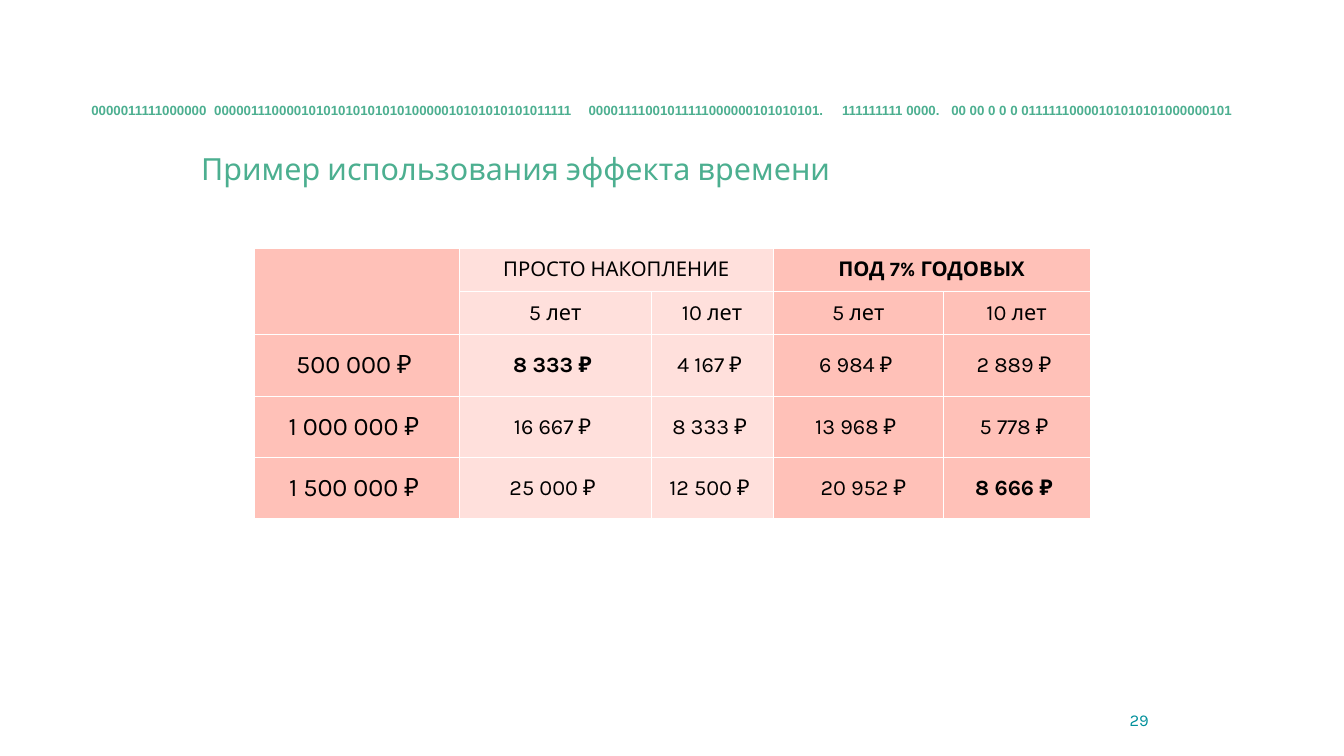
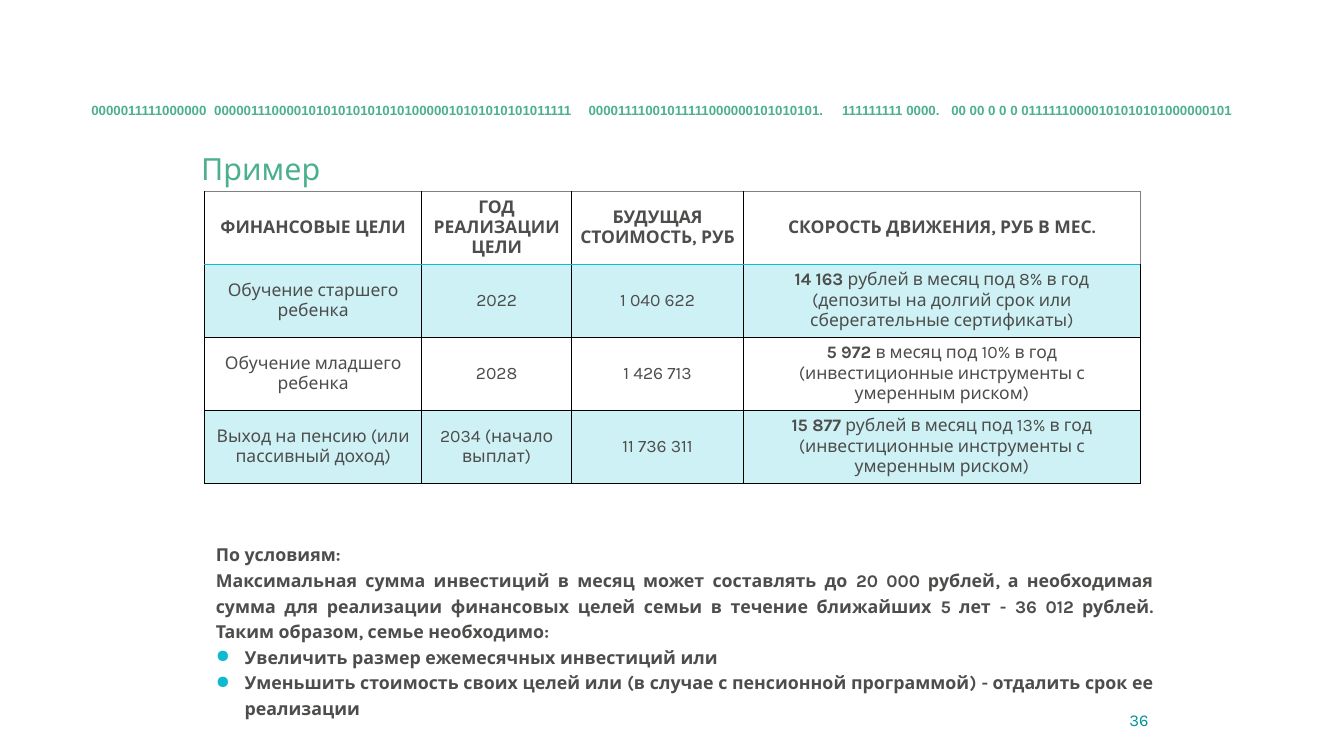
from itertools import product

from lxml.etree import SubElement
from pptx import Presentation
from pptx.dml.color import RGBColor
from pptx.enum.text import MSO_ANCHOR as Anchor, PP_ALIGN as Align
from pptx.oxml.ns import qn
from pptx.util import Pt

PX = 9525
GREEN, TEAL, CYAN = "4CAF90", "00909B", "0EBACE"
BLACK, GRAPHITE, GREY, WHITE = "000000", "4D4D4C", "808080", "FFFFFF"
ROSE, PALE_ROSE = "FFC1B8", "FFE0DC"
BINARY_PARTS = [
    "0000011111000000",
    "0000011100001010101010101010000010101010101011111",
    "00001111001011111000000101010101.",
    "111111111 0000.",
    "00 00 0 0 0 01111110000101010101000000101",
]
BINARY_STOPS = [234, 947, 1430, 1638]


def px(length):
    return length * PX


def rgb(color):
    return RGBColor.from_string(color)


def style(paragraph, size, color, bold=None, align=None, font="Karla"):
    if align is not None:
        paragraph.alignment = align
    paragraph.font.name = font
    paragraph.font.size = Pt(size)
    paragraph.font.color.rgb = rgb(color)
    if bold is not None:
        paragraph.font.bold = bold


def set_margins(holder, left, top, right, bottom):
    holder.margin_left, holder.margin_top = px(left), px(top)
    holder.margin_right, holder.margin_bottom = px(right), px(bottom)


def add_frame(slide, box, margins, anchor=Anchor.TOP):
    frame = slide.shapes.add_textbox(*map(px, box)).text_frame
    frame.word_wrap = True
    frame.vertical_anchor = anchor
    set_margins(frame, *margins)
    return frame


def add_binary_line(slide, box):
    line = add_frame(slide, box, (10, 5, 10, 5)).paragraphs[0]
    line.text = "\t".join(BINARY_PARTS)
    stops = SubElement(line._p.get_or_add_pPr(), qn("a:tabLst"))
    for stop in BINARY_STOPS:
        SubElement(stops, qn("a:tab"), pos=str(px(stop)), algn="l")
    style(line, 19, GREEN, True, font="Arial")


def add_base(deck, title, number):
    slide = deck.slides.add_slide(deck.slide_layouts[6])
    page = add_frame(slide, (2055, 1333, 152, 77), (19, 10, 19, 10), Anchor.MIDDLE).paragraphs[0]
    page.text = number
    style(page, 23.6, TEAL, align=Align.RIGHT)
    heading = add_frame(slide, (364, 275, 1832, 102), (19, 10, 19, 10)).paragraphs[0]
    heading.text = title
    style(heading, 43.5, GREEN)
    add_binary_line(slide, (164, 190, 2264, 40))
    return slide


def add_grid(slide, left, top, widths, heights):
    box = left, top, sum(widths), sum(heights)
    table = slide.shapes.add_table(len(heights), len(widths), *map(px, box)).table
    table.first_row = table.horz_banding = False
    for column, width in zip(table.columns, widths):
        column.width = px(width)
    for row, height in zip(table.rows, heights):
        row.height = px(height)
    return table


def set_borders(cell, left, right, top, bottom):
    for side, color in zip("LRTB", (left, right, top, bottom)):
        line = SubElement(cell._tc.get_or_add_tcPr(), qn(f"a:ln{side}"), w=str(Pt(1)))
        SubElement(SubElement(line, qn("a:solidFill")), qn("a:srgbClr"), val=color)


def fill_cell(cell, color, opacity=100):
    cell.fill.solid()
    cell.fill.fore_color.rgb = rgb(color)
    if opacity < 100:
        tint = cell._tc.tcPr.find(qn("a:solidFill")).find(qn("a:srgbClr"))
        SubElement(tint, qn("a:alpha"), val=str(opacity * 1000))


def write_cell(cell, text, size, color, margins, bold=False, lead=""):
    cell.vertical_anchor = Anchor.MIDDLE
    set_margins(cell, *margins)
    paragraph = cell.text_frame.paragraphs[0]
    if lead:
        amount = paragraph.add_run()
        amount.text = lead + " "
        amount.font.bold = True
    paragraph.add_run().text = text
    style(paragraph, size, color, bold, Align.CENTER)


def add_savings_table(slide, left, top):
    rows = [
        ["", "ПРОСТО НАКОПЛЕНИЕ", "", "ПОД 7% ГОДОВЫХ", ""],
        ["", "5 лет", "10 лет", "5 лет", "10 лет"],
        ["500 000 ₽ ", "8 333 ₽ ", "4 167 ₽ ", "6 984 ₽ ", "2 889 ₽ "],
        ["1 000 000 ₽ ", "16 667 ₽ ", "8 333 ₽ ", "13 968 ₽ ", "5 778 ₽ "],
        ["1 500 000 ₽ ", "25 000 ₽ ", "12 500 ₽ ", "20 952 ₽ ", "8 666 ₽ "],
    ]
    highlights = {(0, 3), (2, 1), (4, 4)}
    indented = (4, 3)
    table = add_grid(slide, left, top, [390, 365, 233, 324, 279], [82] * 2 + [117] * 3)
    for r, c in product(range(5), range(5)):
        cell = table.cell(r, c)
        set_borders(cell, *[WHITE] * 4)
        fill_cell(cell, PALE_ROSE if c in (1, 2) else ROSE)
        if rows[r][c]:
            size = 29 if r == 0 else 36 if c == 0 else 31
            margins = (30 if (r, c) == indented else 1, 1, 1, 0)
            write_cell(cell, rows[r][c], size, BLACK, margins, (r, c) in highlights)
    table.cell(0, 0).merge(table.cell(1, 0))
    for c in (1, 3):
        table.cell(0, c).merge(table.cell(0, c + 1))


def add_goals_table(slide, left, top):
    rows = [
        ["ФИНАНСОВЫЕ ЦЕЛИ", "ГОД РЕАЛИЗАЦИИ ЦЕЛИ", "БУДУЩАЯ СТОИМОСТЬ, РУБ",
         "СКОРОСТЬ ДВИЖЕНИЯ, РУБ В МЕС."],
        ["Обучение старшего ребенка", "2022", "1 040 622",
         "рублей в месяц под 8% в год (депозиты на долгий срок или сберегательные сертификаты)"],
        ["Обучение младшего ребенка", "2028", "1 426 713",
         "в месяц под 10% в год (инвестиционные инструменты с умеренным риском)"],
        ["Выход на пенсию (или пассивный доход)", "2034 (начало выплат)", "11 736 311",
         "рублей в месяц под 13% в год (инвестиционные инструменты с умеренным риском)"],
    ]
    payments = ["", "14 163", "5 972", "15 877"]
    table = add_grid(slide, left, top, [413, 286, 327, 756], [139] * 4)
    for r, c in product(range(4), range(4)):
        cell = table.cell(r, c)
        header, last = r == 0, c == 3
        set_borders(
            cell,
            BLACK,
            GREY if header and last else BLACK,
            GREY if header else CYAN if r == 1 else BLACK,
            CYAN if header else BLACK,
        )
        if r % 2:
            fill_cell(cell, CYAN, 20)
        else:
            cell.fill.background()
        write_cell(cell, rows[r][c], 25, GRAPHITE, [9] * 4, header, payments[r] if last else "")


def add_conditions(slide, box):
    conditions = [
        ("По условиям:", 2.0, False),
        ("Максимальная сумма инвестиций в месяц может составлять до 20 000 рублей, "
         "а необходимая сумма для реализации финансовых целей семьи в течение ближайших "
         "5 лет - 36 012 рублей. Таким образом, семье необходимо:", 1.2, False),
        ("Увеличить размер ежемесячных инвестиций или", 1.2, True),
        ("Уменьшить стоимость своих целей или (в случае с пенсионной программой) - "
         "отдалить срок ее реализации", 1.2, True),
    ]
    frame = add_frame(slide, box, [9] * 4)
    for i, (text, spacing, bulleted) in enumerate(conditions):
        paragraph = frame.add_paragraph() if i else frame.paragraphs[0]
        paragraph.text = text
        paragraph.line_spacing = spacing
        if bulleted:
            props = paragraph._p.get_or_add_pPr()
            props.set("marL", str(px(55)))
            props.set("indent", str(px(-55)))
            SubElement(SubElement(props, qn("a:buClr")), qn("a:srgbClr"), val=CYAN)
            SubElement(props, qn("a:buChar"), char="●")
        style(paragraph, 25.4, GRAPHITE, True, Align.JUSTIFY)


def main():
    deck = Presentation()
    deck.slide_width, deck.slide_height = px(2560), px(1440)
    savings = add_base(deck, "Пример использования эффекта времени", "29")
    add_savings_table(savings, 485, 473)
    goals = add_base(deck, "Пример", "36")
    add_goals_table(goals, 390, 364)
    add_conditions(goals, (402, 987, 1805, 390))
    deck.save("out.pptx")


if __name__ == "__main__":
    main()
